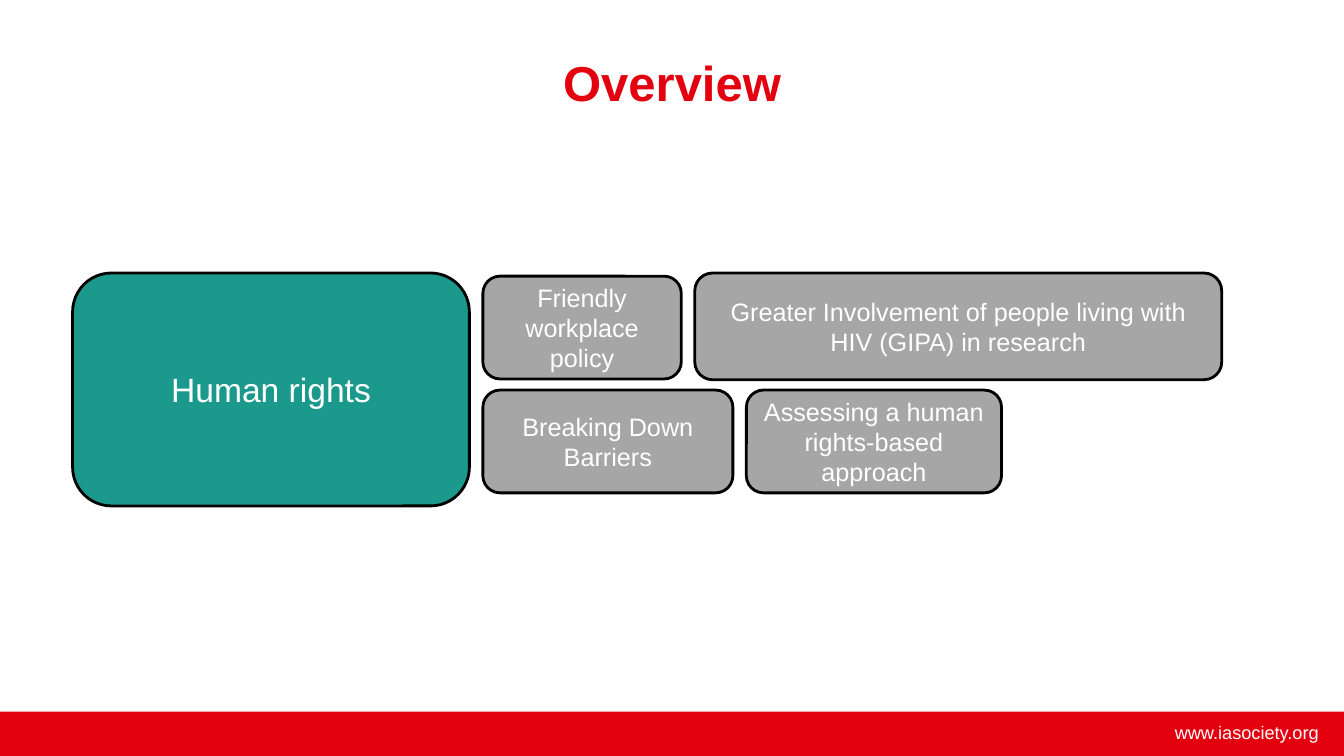
from pptx import Presentation
from pptx.dml.color import RGBColor
from pptx.enum.shapes import MSO_SHAPE
from pptx.enum.text import MSO_ANCHOR, PP_ALIGN
from pptx.util import Cm, Pt

RECT, ROUND = MSO_SHAPE.RECTANGLE, MSO_SHAPE.ROUNDED_RECTANGLE
TOP, MIDDLE = MSO_ANCHOR.TOP, MSO_ANCHOR.MIDDLE
CENTER, RIGHT = PP_ALIGN.CENTER, PP_ALIGN.RIGHT

RED = RGBColor(0xE3, 0x00, 0x0F)
TEAL = RGBColor(0x1A, 0x99, 0x8C)
GRAY = RGBColor(0xA6, 0xA6, 0xA6)
BLACK = RGBColor(0x00, 0x00, 0x00)
WHITE = RGBColor(0xFF, 0xFF, 0xFF)

TITLE = "Overview"
SITE = "www.iasociety.org"
THEME = "Human rights"
# Rows of topics: (text, top, width, height) in cm
ROWS = [
    [("Friendly workplace policy", 6.96, 5.0, 2.59),
     ("Greater Involvement of people living with HIV (GIPA) in research",
      6.88, 13.28, 2.69)],
    [("Breaking Down Barriers", 9.83, 6.3, 2.59),
     ("Assessing a human rights-based approach", 9.83, 6.43, 2.59)],
]

WIDTH, HEIGHT, BAR = 33.87, 19.05, 1.12
LEFT, THEME_W, GAP = 1.83, 10.0, 0.34


def write(shape, text, size, color=WHITE, align=CENTER, anchor=MIDDLE, bold=False):
    frame = shape.text_frame
    frame.word_wrap = True
    frame.vertical_anchor = anchor
    para = frame.paragraphs[0]
    para.text = text
    para.alignment = align
    font = para.font
    font.name, font.size, font.bold = "Arial", Pt(size), bold
    font.color.rgb = color


def add_block(slide, kind, box, fill):
    shape = slide.shapes.add_shape(kind, *map(Cm, box))
    shape.shadow.inherit = False
    shape.fill.solid()
    shape.fill.fore_color.rgb = fill
    return shape


def add_card(slide, box, fill, text, size):
    card = add_block(slide, ROUND, box, fill)
    card.line.color.rgb = BLACK
    card.line.width = Pt(2)
    write(card, text, size)


def add_label(slide, box, *args, **style):
    write(slide.shapes.add_textbox(*map(Cm, box)), *args, **style)


def main():
    deck = Presentation()
    deck.slide_width, deck.slide_height = Cm(WIDTH), Cm(HEIGHT)
    slide = deck.slides.add_slide(deck.slide_layouts[6])

    bar = add_block(slide, RECT, (0, HEIGHT - BAR, WIDTH, BAR), RED)
    bar.line.fill.background()
    add_label(slide, (26.49, 18.06, 6.99, 0.81), SITE, 13, align=RIGHT, anchor=TOP)
    add_label(slide, (4.24, 0, 25.4, 4.11), TITLE, 35, RED, bold=True)

    add_card(slide, (LEFT, 6.88, THEME_W, 5.87), TEAL, THEME, 24)
    for row in ROWS:
        x = LEFT + THEME_W + GAP
        for text, top, width, height in row:
            add_card(slide, (x, top, width, height), GRAY, text, 18)
            x += width + GAP

    deck.save("out.pptx")


if __name__ == "__main__":
    main()
